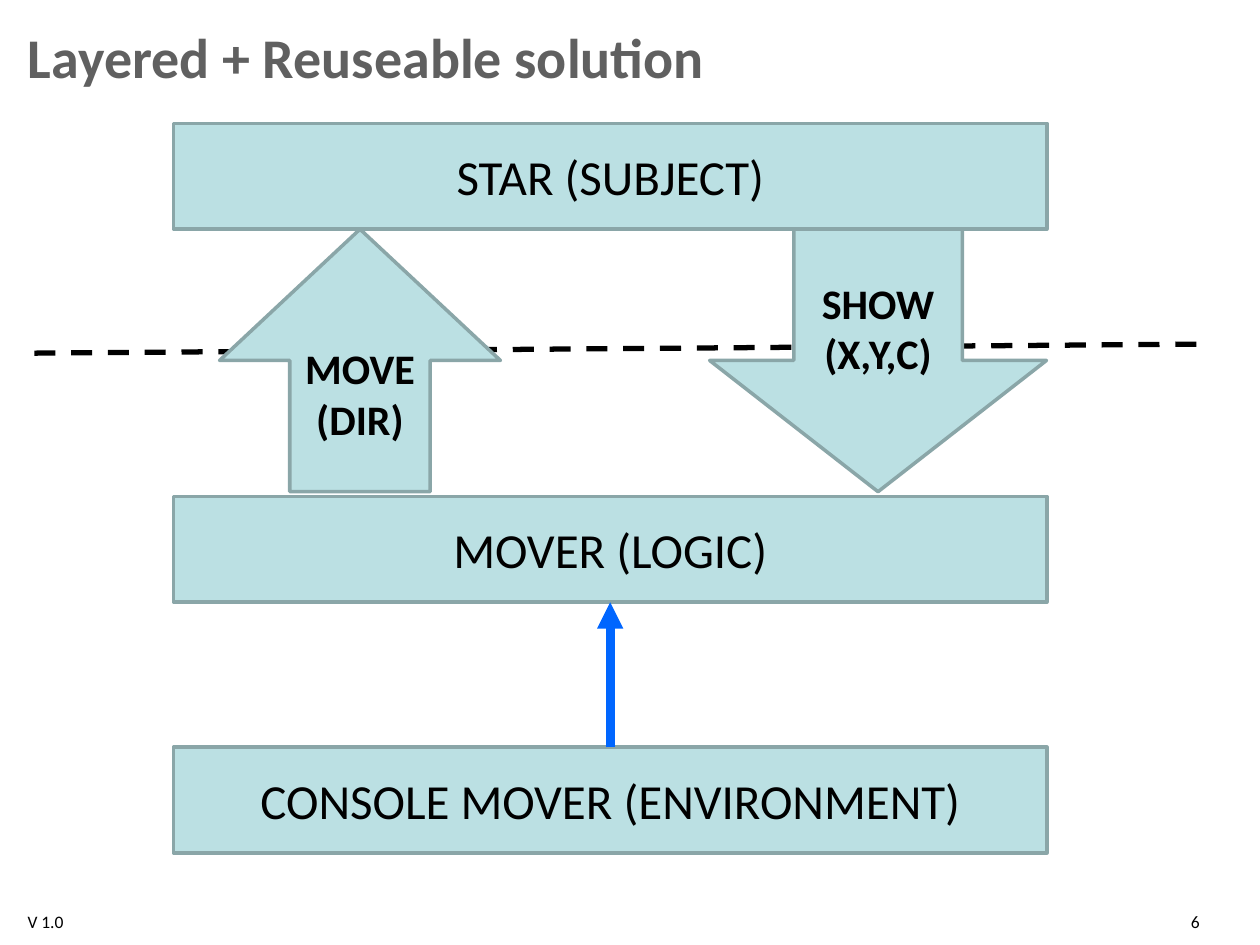
from lxml import etree
from pptx import Presentation
from pptx.dml.color import RGBColor
from pptx.enum import dml, shapes, text
from pptx.oxml.ns import qn
from pptx.util import Pt

COLORS = {"fill": "BBE0E3", "edge": "8AA6A8", "title": "606060",
          "ink": "000000", "call": "0066FF"}
FONT = "Calibri"
TITLE = "Layered + Reuseable solution"
# Layer label and top edge
LAYERS = [("STAR (SUBJECT)", 70.5), ("MOVER (LOGIC)", 283.7),
          ("CONSOLE MOVER (ENVIRONMENT)", 427)]
LAYER_LEFT, LAYER_WIDTH, LAYER_HEIGHT = 99.2, 499, 60.5
# Preset, paragraphs (each a list of lines), left, width
MESSAGES = [
    (shapes.MSO_SHAPE.UP_ARROW, [["MOVE"], ["(DIR)"]], 125.5, 160.5),
    (shapes.MSO_SHAPE.DOWN_ARROW, [["SHOW", "(X,Y,C)"]], 405.5, 192.5),
]
MESSAGE_HEIGHT = 150
# Footer text, left, width, alignment
FOOTERS = [("V 1.0", 8.64, 57, text.PP_ALIGN.LEFT),
           ("6", 598.3, 94.3, text.PP_ALIGN.RIGHT)]
FOOTER_TOP, FOOTER_HEIGHT = 517, 14.4


def color(name):
    return RGBColor.from_string(COLORS[name])


def write(frame, paragraphs, size, align, ink="ink", bold=False):
    """Fill a text frame; each paragraph is a list of lines."""
    frame.word_wrap = True
    for index, lines in enumerate(paragraphs):
        paragraph = frame.paragraphs[0] if index == 0 else frame.add_paragraph()
        paragraph.alignment = align
        for number, line in enumerate(lines):
            if number:
                paragraph.add_line_break()
            run = paragraph.add_run()
            run.text = line
            run.font.name, run.font.size, run.font.bold = FONT, Pt(size), bold
            run.font.color.rgb = color(ink)


def add_block(slide, preset, box, paragraphs, size, bold=False):
    block = slide.shapes.add_shape(preset, *map(Pt, box))
    block.shadow.inherit = False
    block.fill.solid()
    block.fill.fore_color.rgb = color("fill")
    block.line.color.rgb = color("edge")
    block.line.width = Pt(2)
    block.text_frame.vertical_anchor = text.MSO_ANCHOR.MIDDLE
    write(block.text_frame, paragraphs, size, text.PP_ALIGN.CENTER, bold=bold)


def add_line(slide, ends, ink, width):
    line = slide.shapes.add_connector(shapes.MSO_CONNECTOR.STRAIGHT, *map(Pt, ends))
    line.line.color.rgb = color(ink)
    line.line.width = Pt(width)
    etree.SubElement(line._element.spPr, qn("a:effectLst"))
    return line


def main():
    deck = Presentation()
    deck.slide_width, deck.slide_height = Pt(720), Pt(540)
    slide = deck.slides.add_slide(deck.slide_layouts[5])

    boundary = add_line(slide, (19.6, 201.8, 692.6, 196.6), "ink", 3)
    boundary.line.dash_style = dml.MSO_LINE.DASH

    title = slide.shapes.title
    title.left, title.top, title.width, title.height = map(Pt, (8.64, 9.4, 702.7, 45.4))
    title.text_frame.vertical_anchor = text.MSO_ANCHOR.MIDDLE
    write(title.text_frame, [[TITLE]], 32, text.PP_ALIGN.LEFT, "title", True)

    for label, left, width, align in FOOTERS:
        footer = slide.shapes.add_textbox(Pt(left), Pt(FOOTER_TOP), Pt(width), Pt(FOOTER_HEIGHT))
        write(footer.text_frame, [[label]], 10, align)

    for label, top in LAYERS:
        add_block(slide, shapes.MSO_SHAPE.RECTANGLE,
                  (LAYER_LEFT, top, LAYER_WIDTH, LAYER_HEIGHT), [[label]], 28)

    star_top, mover_top, console_top = (top for _, top in LAYERS)
    center = LAYER_LEFT + LAYER_WIDTH / 2
    call = add_line(slide, (center, console_top, center, mover_top + LAYER_HEIGHT), "call", 5)
    etree.SubElement(call.line._get_or_add_ln(), qn("a:tailEnd"), type="triangle")

    for preset, paragraphs, left, width in MESSAGES:
        add_block(slide, preset, (left, star_top + LAYER_HEIGHT, width, MESSAGE_HEIGHT),
                  paragraphs, 24, bold=True)

    deck.save("out.pptx")


if __name__ == "__main__":
    main()
